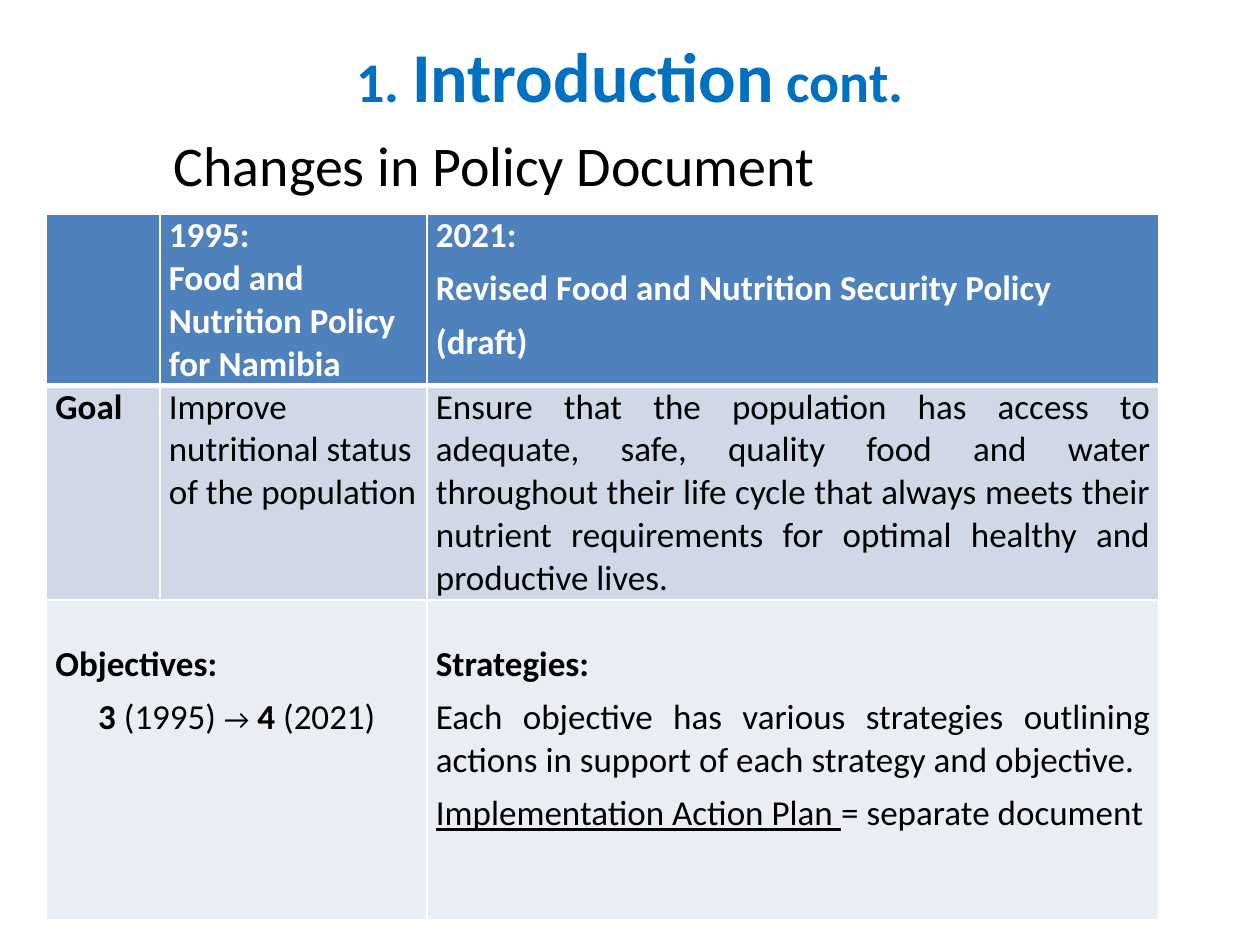
from dataclasses import dataclass, field

from lxml.etree import SubElement
from pptx import Presentation
from pptx.dml.color import RGBColor
from pptx.enum.text import MSO_ANCHOR as Anchor, PP_ALIGN as Align
from pptx.oxml.ns import qn
from pptx.util import Inches, Pt


@dataclass(frozen=True)
class Theme:
    font: str = "Calibri"
    title: str = "0070C0"
    text: str = "000000"
    white: str = "FFFFFF"
    header: str = "4F81BD"
    goal: str = "D0D8E8"
    objectives: str = "E9EDF4"
    title_size: int = 40
    subtitle_size: int = 32
    body_size: int = 20
    arrow_size: int = 16
    thin_border: int = 1
    thick_border: int = 3


THEME = Theme()


@dataclass
class Run:
    text: str
    bold: bool = False
    size: int = THEME.body_size
    underline: bool = False
    color: str = THEME.text


@dataclass
class Para:
    runs: list[Run]
    align: Align = Align.LEFT
    before: float = 0
    after: float = 0


@dataclass
class CellContent:
    row: int
    column: int
    paragraphs: list[Para] = field(default_factory=list)
    top_margin: float = 0


def write_text(text_frame, paragraphs: list[Para]) -> None:
    """Fill a text frame run by run."""
    for index, content in enumerate(paragraphs):
        paragraph = text_frame.add_paragraph() if index else text_frame.paragraphs[0]
        paragraph.alignment = content.align
        paragraph.space_before = Pt(content.before)
        paragraph.space_after = Pt(content.after)
        for item in content.runs:
            run = paragraph.add_run()
            run.text = item.text
            run.font.name = THEME.font
            run.font.size = Pt(item.size)
            run.font.bold = item.bold
            run.font.underline = item.underline
            run.font.color.rgb = RGBColor.from_string(item.color)


def set_border(cell, side: str, width: int) -> None:
    line = SubElement(cell._tc.get_or_add_tcPr(), qn(f"a:ln{side}"), w=str(Pt(width)))
    SubElement(SubElement(line, qn("a:solidFill")), qn("a:srgbClr"), val=THEME.white)


def style_cell(cell, row: int, fill: str) -> None:
    """Set margins, white borders (thick under the header) and fill."""
    cell.margin_left = cell.margin_right = Inches(0.07)
    cell.margin_top = cell.margin_bottom = 0
    thick_side = {0: "B", 1: "T"}.get(row)
    for side in "LRTB":
        set_border(cell, side, THEME.thick_border if side == thick_side else THEME.thin_border)
    cell.fill.solid()
    cell.fill.fore_color.rgb = RGBColor.from_string(fill)


def heading(text: str, before: float = 0) -> Para:
    return Para([Run(text, bold=True, color=THEME.white)], before=before)


CELLS = [
    CellContent(0, 1, [heading("1995:"), heading("Food and Nutrition Policy for Namibia")]),
    CellContent(0, 2, [heading(text, 6) for text in (
        "2021:", "Revised Food and Nutrition Security Policy", "(draft)")]),
    CellContent(1, 0, [Para([Run("Goal", bold=True)], Align.JUSTIFY)]),
    CellContent(1, 1, [Para([Run("Improve nutritional status of the population")])]),
    CellContent(1, 2, [Para([Run(
        "Ensure that the population has access to adequate, safe, quality food and water "
        "throughout their life cycle that always meets their nutrient requirements for "
        "optimal healthy and productive lives.")], Align.JUSTIFY)]),
    CellContent(2, 0, [
        Para([Run("Objectives:", bold=True)], after=6),
        Para([Run("3", bold=True), Run(" (1995) "), Run("→", size=THEME.arrow_size),
              Run(" 4 ", bold=True), Run("(2021)")], Align.CENTER),
    ], top_margin=0.34),
    CellContent(2, 2, [
        Para([Run("Strategies:", bold=True)], Align.JUSTIFY, after=6),
        Para([Run("Each objective has various strategies outlining actions in support "
                  "of each strategy and objective.")], Align.JUSTIFY),
        Para([Run("Implementation Action Plan ", underline=True),
              Run("= separate document")], Align.JUSTIFY, before=6),
    ], top_margin=0.34),
]


def add_title(slide) -> None:
    title = slide.shapes.title
    title.left, title.top = Inches(0.5), Inches(-0.03)
    title.width, title.height = Inches(9), Inches(1.25)
    title.text_frame.vertical_anchor = Anchor.MIDDLE
    parts = [("1. ", THEME.subtitle_size), ("Introduction", THEME.title_size),
             (" cont.", THEME.subtitle_size)]
    write_text(title.text_frame, [Para(
        [Run(text, True, size, color=THEME.title) for text, size in parts], Align.CENTER)])


def add_subtitle(slide) -> None:
    box = slide.shapes.add_textbox(Inches(1.28), Inches(0.99), Inches(8.14), Inches(0.71))
    box.text_frame.word_wrap = True
    write_text(box.text_frame, [Para(
        [Run("Changes in Policy Document", size=THEME.subtitle_size)], before=6.4)])


def add_policy_table(slide) -> None:
    widths, heights = (0.9, 2.12, 5.81), (1.35, 1.7, 2.54)
    table = slide.shapes.add_table(
        len(heights), len(widths), Inches(0.37), Inches(1.7),
        Inches(sum(widths)), Inches(sum(heights))).table
    for column, width in zip(table.columns, widths):
        column.width = Inches(width)
    fills = (THEME.header, THEME.goal, THEME.objectives)
    for row_index, (row, height, fill) in enumerate(zip(table.rows, heights, fills)):
        row.height = Inches(height)
        for cell in row.cells:
            style_cell(cell, row_index, fill)
    # Objectives span the first two columns
    table.cell(2, 0).merge(table.cell(2, 1))
    for content in CELLS:
        cell = table.cell(content.row, content.column)
        cell.margin_top = Inches(content.top_margin)
        write_text(cell.text_frame, content.paragraphs)


def main() -> None:
    presentation = Presentation()
    presentation.slide_width, presentation.slide_height = Inches(10), Inches(7.5)
    slide = presentation.slides.add_slide(presentation.slide_layouts[5])
    add_title(slide)
    add_policy_table(slide)
    add_subtitle(slide)
    presentation.save("out.pptx")


if __name__ == "__main__":
    main()
